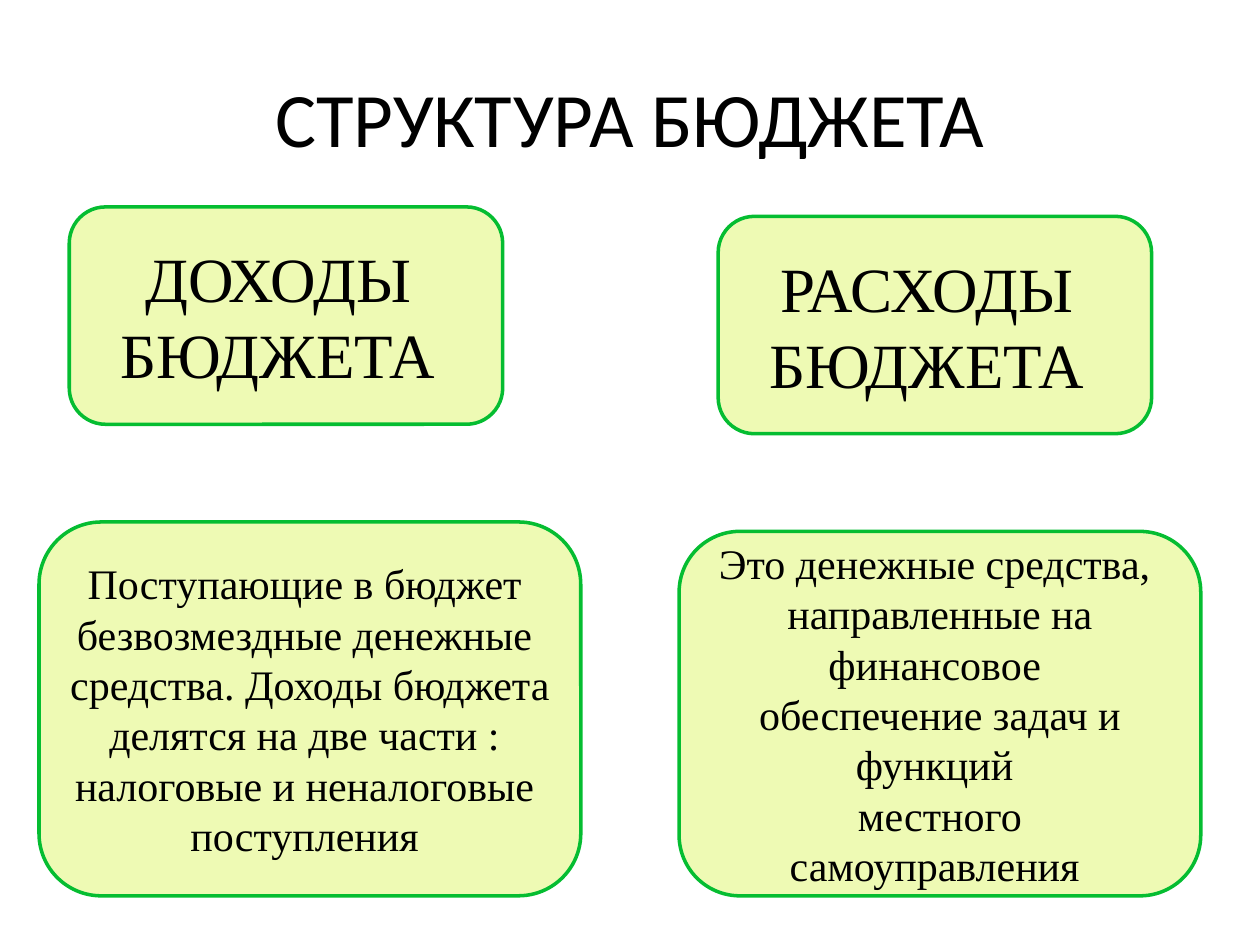
from pptx import Presentation
from pptx import util as u
from pptx.dml import color
from pptx.enum import shapes, text

WIDTH, HEIGHT = 10, 7.5
INK, FILL, EDGE = "000000", "EEFAB4", "05BD31"
SERIF, SANS = "Times New Roman", "Calibri"

INCOME_HEAD = ["ДОХОДЫ ", "БЮДЖЕТА "]
SPENDING_HEAD = ["РАСХОДЫ ", "БЮДЖЕТА "]
INCOME_BODY = [
    "Поступающие в бюджет ",
    "безвозмездные денежные ",
    "средства. Доходы бюджета ",
    "делятся на две части : ",
    "налоговые и неналоговые ",
    "поступления ",
]
SPENDING_BODY = [
    "Это денежные средства, ",
    "направленные на финансовое ",
    "обеспечение задач и функций ",
    "местного самоуправления ",
]


def paint(target, value):
    target.rgb = color.RGBColor.from_string(value)


def inches(box):
    left, top, width, height = box
    return [u.Inches(share * size) for share, size in
            zip((left, top, width, height), (WIDTH, HEIGHT) * 2)]


def write(frame, lines, size, font):
    frame.word_wrap = True
    frame.vertical_anchor = text.MSO_ANCHOR.MIDDLE
    for index, line in enumerate(lines):
        para = frame.add_paragraph() if index else frame.paragraphs[0]
        para.alignment = text.PP_ALIGN.CENTER
        span = para.add_run()
        span.text = line
        span.font.size = u.Pt(size)
        span.font.name = font
        paint(span.font.color, INK)


def add_title(page, box, line):
    title = page.shapes.title
    title.left, title.top, title.width, title.height = inches(box)
    write(title.text_frame, [line], 44, SANS)


def add_card(page, box, lines, size):
    card = page.shapes.add_shape(shapes.MSO_SHAPE.ROUNDED_RECTANGLE, *inches(box))
    card.shadow.inherit = False
    card.fill.solid()
    paint(card.fill.fore_color, FILL)
    paint(card.line.color, EDGE)
    card.line.width = u.Pt(2)
    write(card.text_frame, lines, size, SERIF)


def add_column(page, box, head_left, head_lines, body_lines):
    left, top, width, height = box
    head_width, head_height, bottom = 0.344, 0.23, top + height
    body_top = top + 1 / 3
    add_card(page, (head_left, top, head_width, head_height), head_lines, 36)
    add_card(page, (left, body_top, width, bottom - body_top), body_lines, 24)


def main():
    deck = Presentation()
    deck.slide_width, deck.slide_height = u.Inches(WIDTH), u.Inches(HEIGHT)
    page = deck.slides.add_slide(deck.slide_layouts[5])
    add_title(page, (0.05, 0.04, 0.9, 1 / 6), "СТРУКТУРА БЮДЖЕТА")
    add_column(page, (0.031, 0.219, 0.43, 0.729), 0.055, INCOME_HEAD, INCOME_BODY)
    add_column(page, (0.539, 0.229, 0.414, 0.719), 0.57, SPENDING_HEAD, SPENDING_BODY)
    deck.save("out.pptx")


if __name__ == "__main__":
    main()
